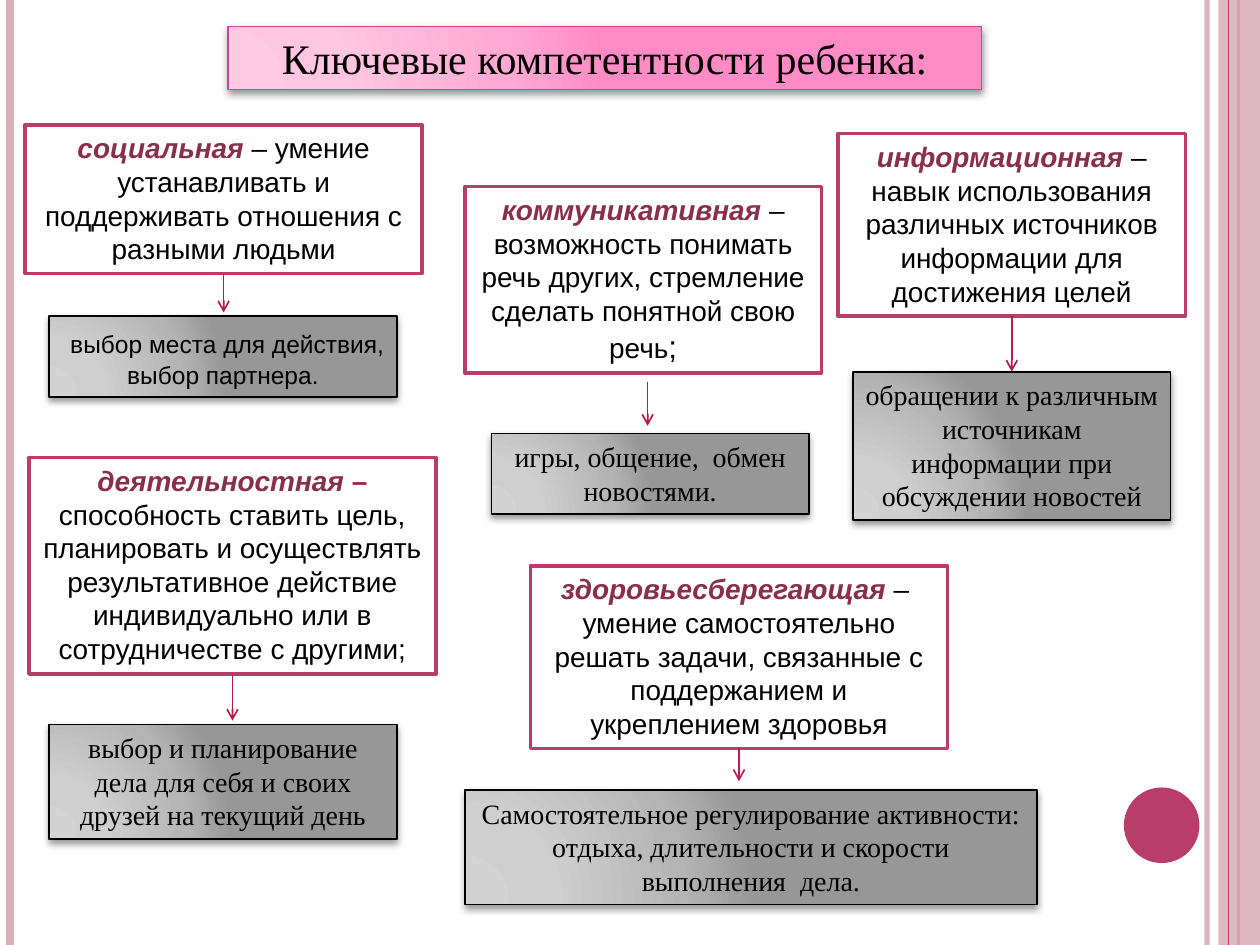
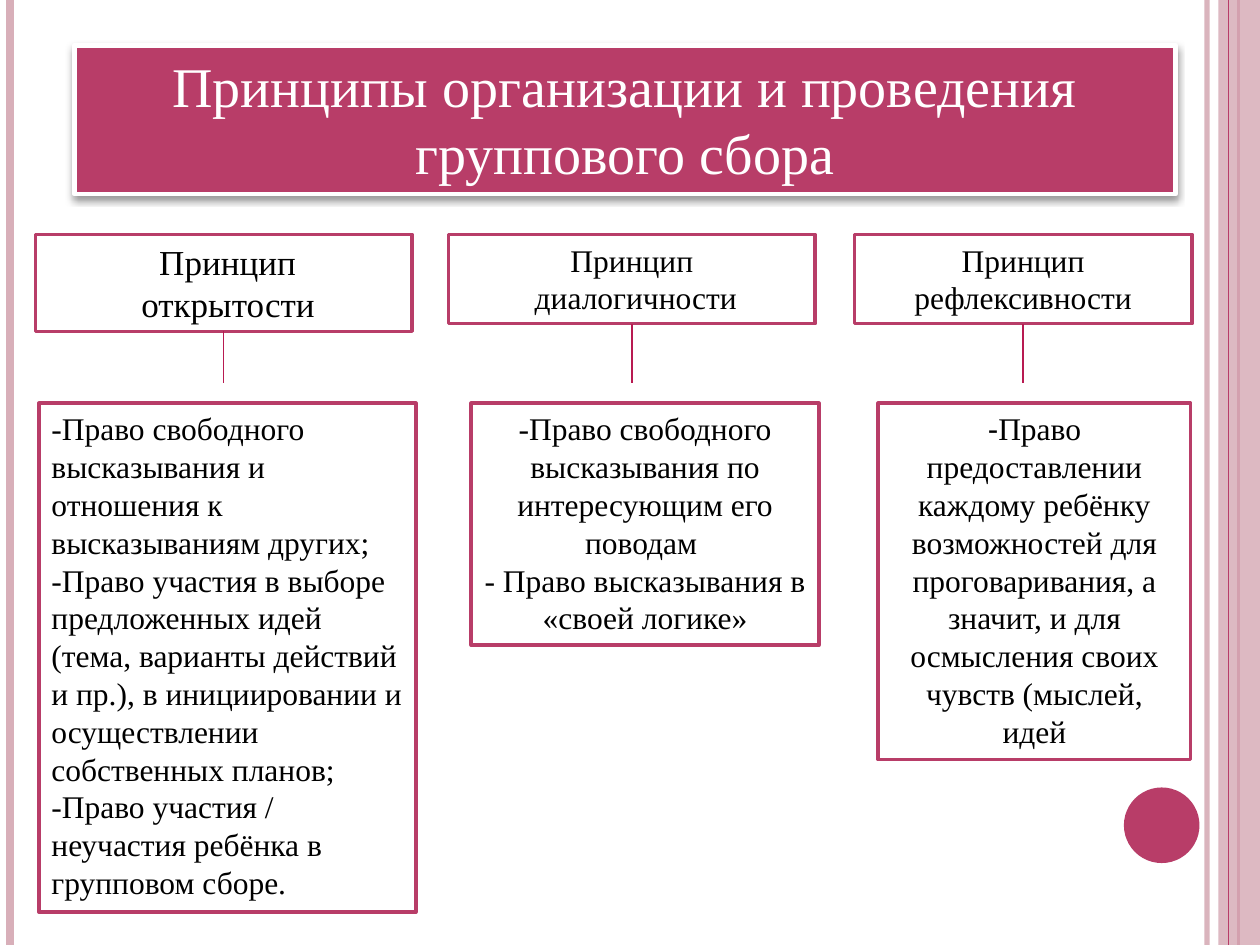
from lxml.etree import SubElement
from pptx import Presentation
from pptx.dml.color import RGBColor
from pptx.enum.shapes import MSO_CONNECTOR, MSO_SHAPE
from pptx.enum.text import MSO_ANCHOR, MSO_AUTO_SIZE, PP_ALIGN
from pptx.oxml.ns import qn
from pptx.util import Inches, Pt

RASPBERRY = RGBColor(0xB8, 0x3D, 0x68)
ARROW = RGBColor(0xB8, 0x1A, 0x51)
TERM = RGBColor(0x8A, 0x2E, 0x4E)
ROSE = RGBColor(0xD8, 0xAF, 0xB9)
PINK_EDGE = RGBColor(0xC6, 0x48, 0x8F)
BLACK = RGBColor(0, 0, 0)
WHITE = RGBColor(0xFF, 0xFF, 0xFF)
PINK_GLOW = ("FFCBE4", "FFC6E1", "FFA8D3", "FF8BC6")
GREY_GLOW = ("D3D3D3", "CFCFCF", "B4B4B4", "979797")
GLOW_STOPS = (0, 30, 75, 100)
SERIF, SANS = "Times New Roman", "Arial"
TERM_STYLE = {"color": TERM, "bold": True, "italic": True}
BOTTOM, TOP = 2, 0


# Formatting helpers
def write(frame, paragraphs, **base):
    """Each paragraph is a string or a list of (text, run format) pairs."""
    frame.word_wrap = True
    frame.auto_size = MSO_AUTO_SIZE.NONE
    frame.vertical_anchor = MSO_ANCHOR.TOP
    for index, content in enumerate(paragraphs):
        paragraph = frame.add_paragraph() if index else frame.paragraphs[0]
        paragraph.alignment = base.get("align", PP_ALIGN.CENTER)
        for text, extra in [(content, {})] if isinstance(content, str) else content:
            style = {**base, **extra}
            run = paragraph.add_run()
            run.text = text
            run.font.size = Pt(style["size"])
            run.font.name = style.get("font", SERIF)
            run.font.color.rgb = style.get("color", BLACK)
            run.font.bold = style.get("bold", False)
            run.font.italic = style.get("italic", False)


def set_alpha(part, percent):
    for color in part.element.spPr.iter(qn("a:srgbClr")):
        SubElement(color, qn("a:alpha"), val=str(percent * 1000))


def glow_fill(part, colors):
    part.fill.gradient()
    gradient = part.element.spPr.find(qn("a:gradFill"))
    for child in list(gradient):
        gradient.remove(child)
    stops = SubElement(gradient, qn("a:gsLst"))
    for position, color in zip(GLOW_STOPS, colors):
        stop = SubElement(stops, qn("a:gs"), pos=str(position * 1000))
        SubElement(stop, qn("a:srgbClr"), val=color)
    circle = SubElement(gradient, qn("a:path"), {"path": "circle"})
    SubElement(circle, qn("a:fillToRect"), l="5000", t="100000", r="120000", b="10000")


def drop_shadow(part):
    effects = part.element.spPr.find(qn("a:effectLst"))
    shadow = SubElement(effects, qn("a:outerShdw"), blurRad=str(Pt(4)), dist=str(Pt(2)),
                        dir="5400000", algn="ctr", rotWithShape="0")
    color = SubElement(shadow, qn("a:srgbClr"), val=str(BLACK))
    SubElement(color, qn("a:alpha"), val="40000")


def decorate(part, fill, edge=None, width=0, shadow=False):
    part.shadow.inherit = False
    if isinstance(fill, RGBColor):
        part.fill.solid()
        part.fill.fore_color.rgb = fill
    else:
        glow_fill(part, fill)
    if edge is None:
        part.line.fill.background()
    else:
        part.line.color.rgb = edge
        part.line.width = Pt(width)
    if shadow:
        drop_shadow(part)


# Building blocks
def add_box(slide, box, fill, edge=None, width=0, shadow=False, kind=MSO_SHAPE.RECTANGLE):
    part = slide.shapes.add_shape(kind, *map(Inches, box))
    decorate(part, fill, edge, width, shadow)
    return part


def add_line(slide, start, end, color=ARROW, width=1, arrow=False):
    line = slide.shapes.add_connector(MSO_CONNECTOR.STRAIGHT, *map(Inches, (*start, *end)))
    line.line.color.rgb = color
    line.line.width = Pt(width)
    if arrow:
        SubElement(line.element.spPr.find(qn("a:ln")), qn("a:tailEnd"), type="arrow")
    SubElement(line.element.spPr, qn("a:effectLst"))
    return line


def add_card(slide, box, paragraphs, **style):
    card = add_box(slide, box, WHITE, RASPBERRY, 2)
    write(card.text_frame, paragraphs, **style)
    return card


def add_frame(slide):
    """Side bands and the circle shared by all slides."""
    def stripe(x, color, width):
        return add_line(slide, (x, 0), (x, 7.5), color, width)

    set_alpha(stripe(9.58, ROSE, 3), 93)
    stripe(0.08, ROSE, 4.5)
    stripe(9.83, RASPBERRY, 1.5)
    set_alpha(add_box(slide, (9.67, 0, 0.33, 7.5), ROSE), 87)
    stripe(9.75, RASPBERRY, 0.75)
    add_box(slide, (8.92, 6.25, 0.6, 0.6), RASPBERRY, kind=MSO_SHAPE.OVAL)


def start_slide(deck, title, box, fill, edge, width, **style):
    slide = deck.slides.add_slide(deck.slide_layouts[5])
    add_frame(slide)
    banner = slide.shapes.title
    banner.left, banner.top, banner.width, banner.height = map(Inches, box)
    decorate(banner, fill, edge, width, shadow=True)
    write(banner.text_frame, [title], **style)
    return slide


# Slide 1: a competence, an arrow, and how it is practised
def add_competence(slide, box, definition, practice_box, practice, clearance,
                   loose_start=None, size=16, font=SERIF):
    left, top, width, height = box
    card = add_card(slide, box, definition, size=16, font=SANS)
    note = add_box(slide, practice_box, GREY_GLOW, BLACK, 1, shadow=True)
    write(note.text_frame, [practice], size=size, font=font)
    start = loose_start or (left + width / 2, top + height)
    arrow = add_line(slide, start, (start[0], practice_box[1] - clearance), arrow=True)
    if not loose_start:
        arrow.begin_connect(card, BOTTOM)
    if not clearance:
        arrow.end_connect(note, TOP)


def build_competences(deck):
    slide = start_slide(deck, "Ключевые компетентности ребенка:", (1.81, 0.21, 5.98, 0.5),
                        PINK_GLOW, PINK_EDGE, 1, size=24)
    add_competence(
        slide, (0.2, 0.99, 3.15, 1.18),
        [[("социальная", TERM_STYLE),
          (" – умение устанавливать и поддерживать отношения с разными людьми", {})]],
        (0.39, 2.51, 2.76, 0.64),
        [(" ", {"size": 18}), ("выбор места для действия, выбор партнера.", {})],
        0.03, size=14, font=SANS)
    add_competence(
        slide, (3.69, 1.48, 2.83, 1.48),
        [[("коммуникативная", TERM_STYLE),
          (" – возможность понимать речь других, стремление сделать понятной свою речь", {}),
          (";", {"size": 18})]],
        (3.9, 3.44, 2.52, 0.64), "игры, общение,  обмен новостями.",
        0.06, loose_start=(5.14, 3.03))
    add_competence(
        slide, (6.65, 1.06, 2.76, 1.45),
        [[("информационная", TERM_STYLE),
          (" – навык использования различных источников информации для достижения целей", {})]],
        (6.77, 2.95, 2.52, 1.18),
        "обращении к различным источникам информации при обсуждении новостей", 0)
    add_competence(
        slide, (0.23, 3.63, 3.23, 1.72),
        [[("деятельностная", TERM_STYLE), (" – ", {"color": TERM, "bold": True}),
          ("способность ставить цель, планировать и осуществлять результативное действие "
           "индивидуально или в сотрудничестве с другими;", {})]],
        (0.39, 5.75, 2.76, 0.91),
        "выбор и планирование дела для себя и своих друзей на текущий день", 0.03)
    add_competence(
        slide, (4.21, 4.49, 3.31, 1.45),
        [[("здоровьесберегающая ", TERM_STYLE), ("– ", {})],
         "умение самостоятельно решать задачи, связанные с поддержанием и укреплением здоровья"],
        (3.69, 6.27, 4.54, 0.91),
        "Самостоятельное регулирование активности: отдыха, длительности и скорости "
        "выполнения  дела.", 0.07)


# Slide 2: a principle heading, a line, and the rights below it
def add_principle(slide, heading_box, heading, rights_box, rights, size=18,
                  align=PP_ALIGN.CENTER):
    left, top, width, height = heading_box
    card = add_card(slide, heading_box, heading, size=size)
    add_card(slide, rights_box, rights, size=18, align=align)
    middle = left + width / 2
    line = add_line(slide, (middle, top + height), (middle, 3.04))
    line.begin_connect(card, BOTTOM)


def build_principles(deck):
    slide = start_slide(deck, "Принципы организации и проведения группового сбора",
                        (0.59, 0.36, 8.74, 1.18), RASPBERRY, WHITE, 2.75,
                        size=32, color=WHITE)
    add_principle(
        slide, (0.28, 1.86, 2.99, 0.77),
        [[(" ", {"size": 18}), ("Принцип", {})], " открытости"],
        (0.31, 3.2, 2.99, 4.04),
        ["-Право свободного высказывания и отношения к высказываниям других;",
         "-Право участия в выборе предложенных идей (тема, варианты действий и пр.), "
         "в инициировании и осуществлении собственных планов;",
         "-Право участия / неучастия ребёнка в групповом сборе."],
        size=20, align=PP_ALIGN.LEFT)
    add_principle(
        slide, (3.56, 1.86, 2.91, 0.71), ["Принцип", " диалогичности"],
        (3.74, 3.2, 2.76, 1.92),
        ["-Право свободного высказывания по интересующим его поводам ",
         "- Право высказывания в «своей логике»"])
    add_principle(
        slide, (6.78, 1.86, 2.68, 0.71), ["Принцип рефлексивности"],
        (6.97, 3.2, 2.48, 2.83),
        [[("-", {"font": SANS}),
          ("Право предоставлении каждому ребёнку возможностей для проговаривания, "
           "а значит, и для осмысления своих чувств (мыслей, идей", {})]])


def main():
    deck = Presentation()
    deck.slide_width, deck.slide_height = Inches(10), Inches(7.5)
    build_competences(deck)
    build_principles(deck)
    deck.save("out.pptx")


if __name__ == "__main__":
    main()
